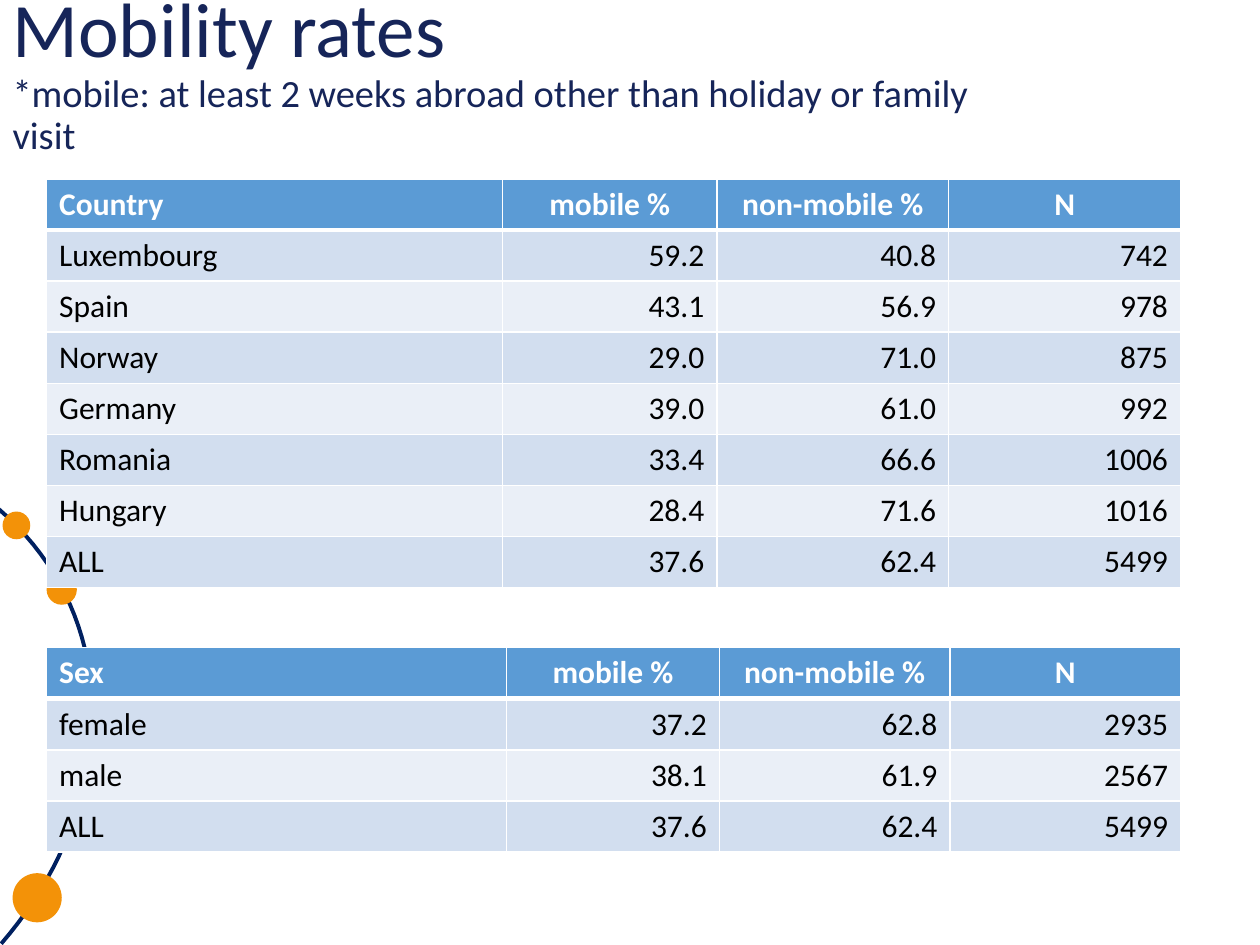
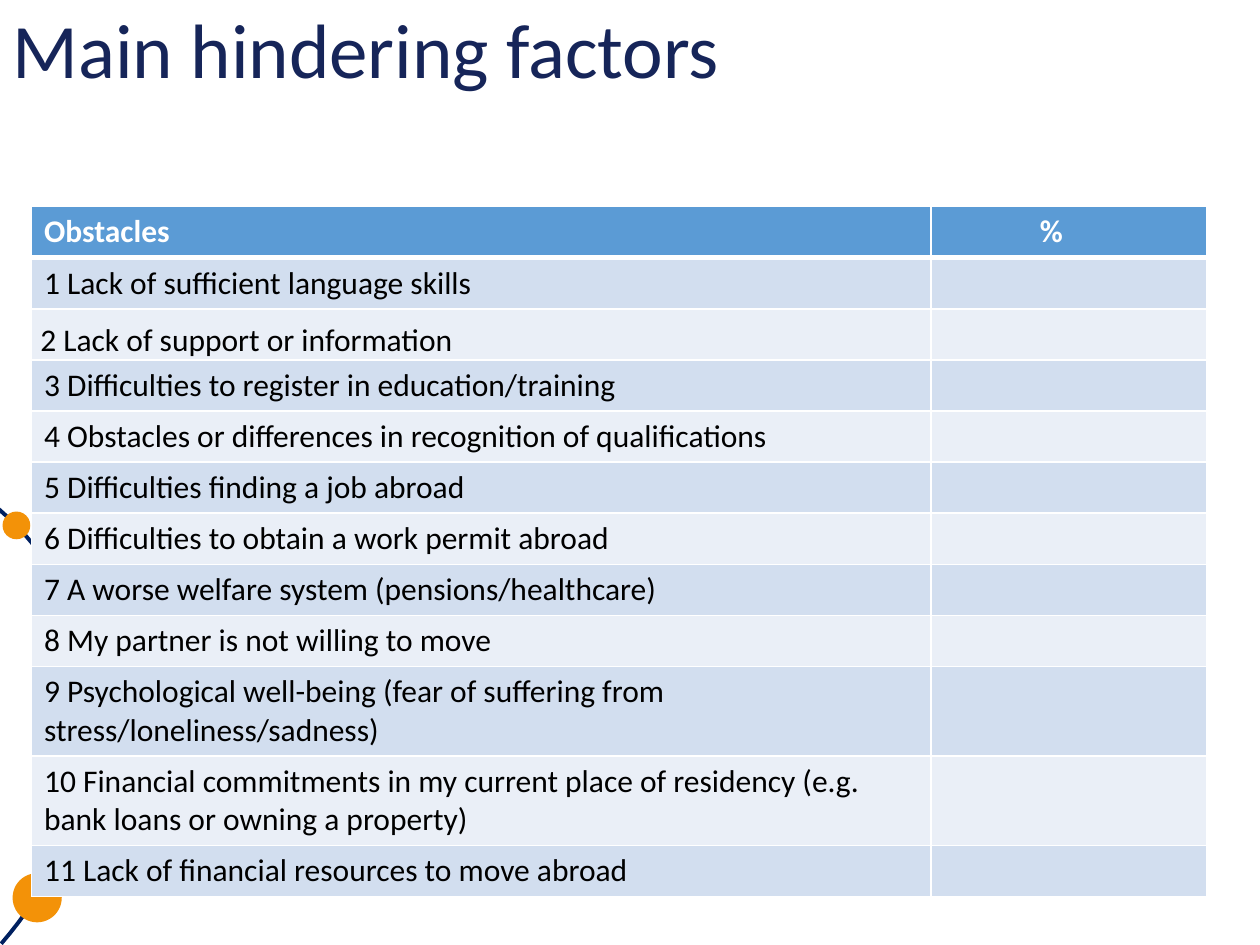
from lxml import etree
from pptx import Presentation
from pptx.dml.color import RGBColor
from pptx.enum.shapes import MSO_SHAPE
from pptx.enum.text import MSO_ANCHOR, MSO_AUTO_SIZE, PP_ALIGN
from pptx.oxml.ns import qn
from pptx.util import Inches, Pt

OVAL = MSO_SHAPE.OVAL
MIDDLE, BOTTOM = MSO_ANCHOR.MIDDLE, MSO_ANCHOR.BOTTOM
NO_FIT = MSO_AUTO_SIZE.NONE
LEFT, CENTER, RIGHT = PP_ALIGN.LEFT, PP_ALIGN.CENTER, PP_ALIGN.RIGHT

FONT = "Calibri"
TITLE, ARC, DOT = "162559", "002060", "F39208"
HEAD, BANDS = "5B9BD5", ("D2DEEF", "EAEFF7")
WHITE, BLACK = "FFFFFF", "000000"

ROW_H = Inches(1.62) // 4
TALL_ROW_H = Inches(0.71)
ARC_CURVE = ((-0.01, 4.04), (1.01, 4.92), (0.95, 6.4), (0.01, 7.49))
ARC_STEPS = 40
DOTS = ((0.02, 4.06, 0.22), (0.37, 4.56, 0.24), (0.53, 5.25, 0.35),
        (0.44, 6.12, 0.38), (0.1, 6.93, 0.39))

RATE_HEADS = ["mobile %", "non-mobile %", "N"]
COUNTRY_ROWS = [
    ["Country"] + RATE_HEADS,
    ["Luxembourg", "59.2", "40.8", "742"],
    ["Spain", "43.1", "56.9", "978"],
    ["Norway", "29.0", "71.0", "875"],
    ["Germany", "39.0", "61.0", "992"],
    ["Romania", "33.4", "66.6", "1006"],
    ["Hungary", "28.4", "71.6", "1016"],
    ["ALL", "37.6", "62.4", "5499"],
]
SEX_ROWS = [
    ["Sex"] + RATE_HEADS,
    ["female", "37.2", "62.8", "2935"],
    ["male", "38.1", "61.9", "2567"],
    ["ALL", "37.6", "62.4", "5499"],
]
OBSTACLES = [
    "Lack of sufficient language skills",
    "Lack of support or information",
    "Difficulties to register in education/training",
    "Obstacles or differences in recognition of qualifications",
    "Difficulties finding a job abroad",
    "Difficulties to obtain a work permit abroad",
    "A worse welfare system (pensions/healthcare)",
    "My partner is not willing to move",
    "Psychological well-being (fear of suffering from stress/loneliness/sadness)",
    "Financial commitments in my current place of residency "
    "(e.g. bank loans or owning a property)",
    "Lack of financial resources to move abroad",
]


def color(value):
    return RGBColor.from_string(value)


def format_run(r, size, value, bold=False):
    r.font.name = FONT
    r.font.size = Pt(size)
    r.font.bold = bold
    r.font.color.rgb = color(value)


def curve_point(t):
    weights = ((1 - t) ** 3, 3 * t * (1 - t) ** 2, 3 * t ** 2 * (1 - t), t ** 3)
    return tuple(Inches(sum(w * point[axis] for w, point in zip(weights, ARC_CURVE)))
                 for axis in (0, 1))


def add_orbit(s):
    points = [curve_point(i / ARC_STEPS) for i in range(ARC_STEPS + 1)]
    builder = s.shapes.build_freeform(*points[0])
    builder.add_line_segments(points[1:], close=False)
    sp = builder.convert_to_shape()
    sp.shadow.inherit = False
    sp.fill.background()
    sp.line.color.rgb = color(ARC)
    sp.line.width = Pt(2.25)
    for x, y, size in DOTS:
        sp = s.shapes.add_shape(OVAL, Inches(x), Inches(y), Inches(size), Inches(size))
        sp.shadow.inherit = False
        sp.fill.solid()
        sp.fill.fore_color.rgb = color(DOT)
        sp.line.fill.background()


def add_slide(prs, title):
    s = prs.slides.add_slide(prs.slide_layouts[5])
    add_orbit(s)
    sp = s.shapes.title
    sp.left, sp.top, sp.width, sp.height = 0, 0, Inches(8.3), Inches(1.18)
    tf = sp.text_frame
    tf.text = title
    tf.word_wrap = True
    tf.auto_size = NO_FIT
    tf.vertical_anchor = MIDDLE
    p = tf.paragraphs[0]
    p.alignment = LEFT
    p.line_spacing = 0.9
    for r, size in zip(p.runs, (44, 22)):
        format_run(r, size, TITLE)
    return s


def add_borders(cell, top, bottom):
    tc_pr = cell._tc.get_or_add_tcPr()
    for side, width in (("L", 1), ("R", 1), ("T", top), ("B", bottom)):
        ln = etree.SubElement(tc_pr, qn("a:ln" + side), w=str(Pt(width)))
        fill = etree.SubElement(ln, qn("a:solidFill"))
        etree.SubElement(fill, qn("a:srgbClr"), val=WHITE)


def format_cell(cell, text, row, col):
    header = row == 0
    add_borders(cell, 3 if row == 1 else 1, 3 if header else 1)
    cell.fill.solid()
    cell.fill.fore_color.rgb = color(HEAD if header else BANDS[(row - 1) % 2])
    cell.text = text
    p = cell.text_frame.paragraphs[0]
    if col:
        p.alignment = CENTER if header else RIGHT
    for r in p.runs:
        format_run(r, 18, WHITE if header else BLACK, header)


def add_banded_table(s, x, y, widths, rows, tall_rows=()):
    heights = [TALL_ROW_H if i in tall_rows else ROW_H for i in range(len(rows))]
    table = s.shapes.add_table(len(rows), len(widths), Inches(x), Inches(y),
                               Inches(sum(widths)), sum(heights)).table
    for column, width in zip(table.columns, widths):
        column.width = Inches(width)
    for i, texts in enumerate(rows):
        table.rows[i].height = heights[i]
        for j, text in enumerate(texts):
            format_cell(table.cell(i, j), text, i, j)
    return table


def build_mobility_rates(prs):
    s = add_slide(prs, "Mobility rates\v*mobile: at least 2 weeks abroad "
                       "other than holiday or family visit")
    add_banded_table(s, 0.37, 1.42, (3.62, 1.7, 1.84, 1.84), COUNTRY_ROWS)
    add_banded_table(s, 0.37, 5.14, (3.65, 1.69, 1.83, 1.83), SEX_ROWS)


def build_hindering_factors(prs):
    s = add_slide(prs, "Main hindering factors")
    s.shapes.title.text_frame.margin_bottom = Inches(0.38)
    rows = [["Obstacles", "%"]]
    rows += [[f"{i} {text}", ""] for i, text in enumerate(OBSTACLES, 1)]
    table = add_banded_table(s, 0.25, 1.64, (7.14, 2.19), rows, tall_rows=(9, 10))
    table.cell(0, 1).margin_right = Inches(0.38)
    support = table.cell(2, 0)
    support.vertical_anchor = BOTTOM
    support.margin_left = Inches(0.07)
    support.margin_top = support.margin_right = Inches(0.01)
    support.margin_bottom = 0


def main():
    prs = Presentation()
    prs.slide_width, prs.slide_height = Inches(10), Inches(7.5)
    build_mobility_rates(prs)
    build_hindering_factors(prs)
    prs.save("out.pptx")


if __name__ == "__main__":
    main()
